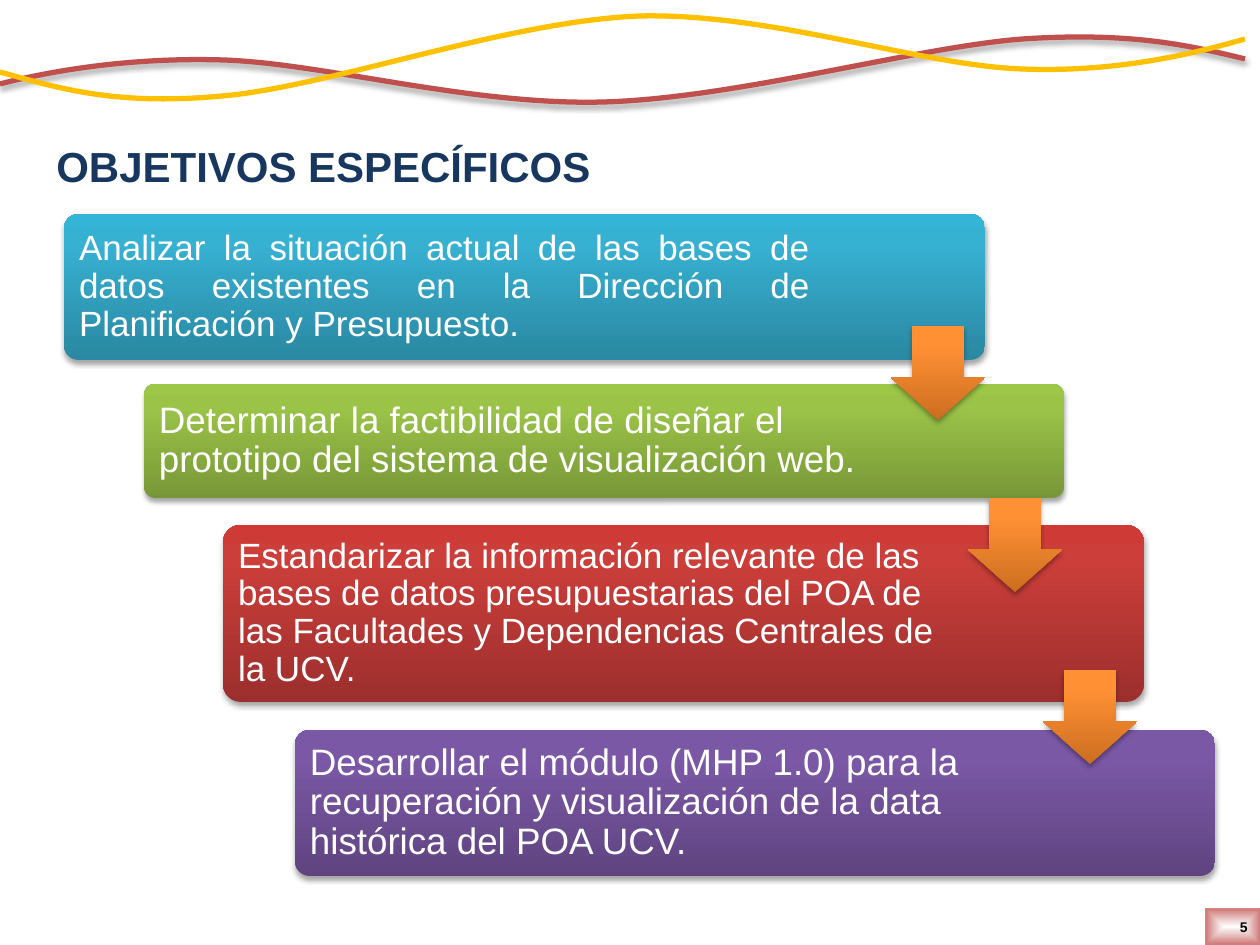
"""Build the specific objectives slide with its stepped boxes and wave header."""
from lxml import etree
from pptx import Presentation, util as u
from pptx.dml.color import RGBColor
from pptx.enum import shapes, text
from pptx.oxml import parse_xml
from pptx.oxml.ns import nsdecls, qn

SCALE = 914400 / 126
FONT = "Arial"
ORANGE = ["CC6E20", "FF9034", "FF9136"]
ARROWS = [(891, 326), (968, 498), (1043, 670)]
OBJECTIVES = [
    ((64, 214, 921, 146), 751, 5, 20, ["2A88A2", "37B1D2", "34B4D6"],
     "Analizar la situación actual de las bases de datos existentes en la "
     "Dirección de Planificación y Presupuesto."),
    ((144, 384, 920, 114), 742, 4, 21, ["779737", "9BC348", "9DC746"],
     "Determinar la factibilidad de diseñar el prototipo del sistema de "
     "visualización web."),
    ((223, 525, 921, 177), 740, 5, 20, ["9C2F2D", "CB3E3A", "CE3B37"],
     "Estandarizar la información relevante de las bases de datos "
     "presupuestarias del POA de las Facultades y Dependencias Centrales de la UCV."),
    ((295, 730, 920, 146), 741, 4, 21, ["5F4480", "7B58A6", "7C57A8"],
     "Desarrollar el módulo (MHP 1.0) para la recuperación y visualización "
     "de la data histórica del POA UCV."),
]
RED_WAVE = [(1245, 59), (1188, 45), (1130, 32), (1023, 39), (917, 47),
            (738, 98), (605, 102), (471, 106), (323, 63), (222, 60),
            (121, 57), (39, 74), (0, 84)]
YELLOW_WAVE = [(0, 72), (58, 88), (115, 106), (222, 96), (329, 87),
               (507, 21), (640, 16), (774, 13), (922, 66), (1023, 69),
               (1124, 73), (1206, 50), (1245, 39)]


def px(length):
    """Turn pixels into EMU."""
    return u.Emu(round(length * SCALE))


def color(value):
    """Turn a hex string into a colour."""
    return RGBColor.from_string(value)


def apply(target, values):
    """Set each named attribute on the target."""
    for name, value in values.items():
        setattr(target, name, value)


def add_shadow(shape):
    """Give a shape a soft shadow straight below it."""
    effects = shape._element.spPr.find(qn("a:effectLst"))
    effects.append(parse_xml(
        f'<a:outerShdw {nsdecls("a")} blurRad="{u.Pt(3.1)}" dist="{u.Pt(1.8)}" '
        'dir="5400000" rotWithShape="0"><a:srgbClr val="000000">'
        '<a:alpha val="35000"/></a:srgbClr></a:outerShdw>'))


def set_gradient(shape, stops, direction):
    """Fill a shape with (position, colour, opacity) stops."""
    shape.fill.background()
    gradient = parse_xml(f'<a:gradFill {nsdecls("a")} rotWithShape="1"><a:gsLst/>'
                         f'{direction}</a:gradFill>')
    for position, value, opacity in stops:
        stop = etree.SubElement(gradient[0], qn("a:gs"), pos=str(position * 1000))
        tone = etree.SubElement(stop, qn("a:srgbClr"), val=value)
        if opacity < 100:
            etree.SubElement(tone, qn("a:alpha"), val=str(opacity * 1000))
    properties = shape._element.spPr
    properties.replace(properties.find(qn("a:noFill")), gradient)


def add_plain_shape(slide, kind, box, adjustments=()):
    """Add a preset shape without line or shadow."""
    shape = slide.shapes.add_shape(kind, *map(px, box))
    shape.shadow.inherit = False
    shape.line.fill.background()
    for index, value in enumerate(adjustments):
        shape.adjustments[index] = value
    return shape


def add_glossy_shape(slide, kind, box, adjustments, tones):
    """Add a shadowed shape that darkens downwards."""
    shape = add_plain_shape(slide, kind, box, adjustments)
    set_gradient(shape, zip((0, 80, 100), tones, (100, 100, 100)),
                 '<a:lin ang="16200000" scaled="0"/>')
    add_shadow(shape)


def write(shape, wording, frame_format, paragraph_format, font_format, tone):
    """Write one formatted paragraph into a shape."""
    frame = shape.text_frame
    apply(frame, {"word_wrap": True, **frame_format})
    paragraph = frame.paragraphs[0]
    run = paragraph.add_run()
    run.text = wording
    apply(paragraph, paragraph_format)
    apply(run.font, {"name": FONT, **font_format})
    run.font.color.rgb = color(tone)


def add_objective(slide, box, text_width, gap, size, tones, wording, alignment):
    """Add a rounded box and the text that stands inside it."""
    add_glossy_shape(slide, shapes.MSO_SHAPE.ROUNDED_RECTANGLE, box, [0.1], tones)
    left, top, _, height = box
    label = slide.shapes.add_textbox(px(left + gap), px(top + gap),
                                     px(text_width), px(height - 2 * gap))
    margin = px(10 if size == 20 else 11)
    sides = ("left", "top", "right", "bottom")
    write(label, wording,
          {"vertical_anchor": text.MSO_ANCHOR.MIDDLE,
           **{f"margin_{side}": margin for side in sides}},
          {"alignment": alignment, "line_spacing": 0.9, "space_after": u.Pt(7)},
          {"size": u.Pt(size)}, "FFFFFF")


def add_wave(slide, controls, tone):
    """Draw one open line of joined cubic curves."""
    start, *rest = [(px(x), px(y)) for x, y in controls]
    builder = slide.shapes.build_freeform(*start)
    builder.add_line_segments(rest, close=False)
    wave = builder.convert_to_shape()
    segments = list(wave._element.iter(qn("a:lnTo")))
    outline = segments[0].getparent()
    for index in range(0, len(segments), 3):
        curve = etree.SubElement(outline, qn("a:cubicBezTo"))
        for segment in segments[index:index + 3]:
            curve.append(segment[0])
            outline.remove(segment)
    wave.shadow.inherit = False
    wave.fill.background()
    wave.line.color.rgb = color(tone)
    wave.line.width = u.Pt(3)
    return wave


def add_page_number(slide):
    """Add the page number on its glowing tile."""
    tile = add_plain_shape(slide, shapes.MSO_SHAPE.RECTANGLE, (1206, 909, 54, 36))
    set_gradient(tile, [(0, "FFFFFF", 71), (100, "C0504D", 80)],
                 '<a:path path="shape"><a:fillToRect l="50000" t="50000" '
                 'r="50000" b="50000"/></a:path>')
    write(tile, "5", {"vertical_anchor": text.MSO_ANCHOR.MIDDLE},
          {"alignment": text.PP_ALIGN.RIGHT},
          {"size": u.Pt(8), "bold": True}, "000000")


def add_title(slide):
    """Add the slide heading."""
    title = slide.shapes.add_textbox(px(44), px(134), px(843), px(63))
    write(title, "OBJETIVOS ESPECÍFICOS",
          {"auto_size": text.MSO_AUTO_SIZE.SHAPE_TO_FIT_TEXT}, {},
          {"size": u.Pt(24), "bold": True}, "17375E")


def main():
    """Build and save the slide."""
    presentation = Presentation()
    apply(presentation, {"slide_width": px(1260), "slide_height": px(945)})
    slide = presentation.slides.add_slide(presentation.slide_layouts[6])
    add_page_number(slide)
    add_shadow(add_wave(slide, RED_WAVE, "C0504D"))
    add_wave(slide, YELLOW_WAVE, "FFC000")
    add_title(slide)
    for index, objective in enumerate(OBJECTIVES):
        alignment = text.PP_ALIGN.LEFT if index else text.PP_ALIGN.JUSTIFY
        add_objective(slide, *objective, alignment)
    for left, top in ARROWS:
        add_glossy_shape(slide, shapes.MSO_SHAPE.DOWN_ARROW, (left, top, 94, 94),
                         [0.55, 0.45], ORANGE)
    presentation.save("out.pptx")


if __name__ == "__main__":
    main()
